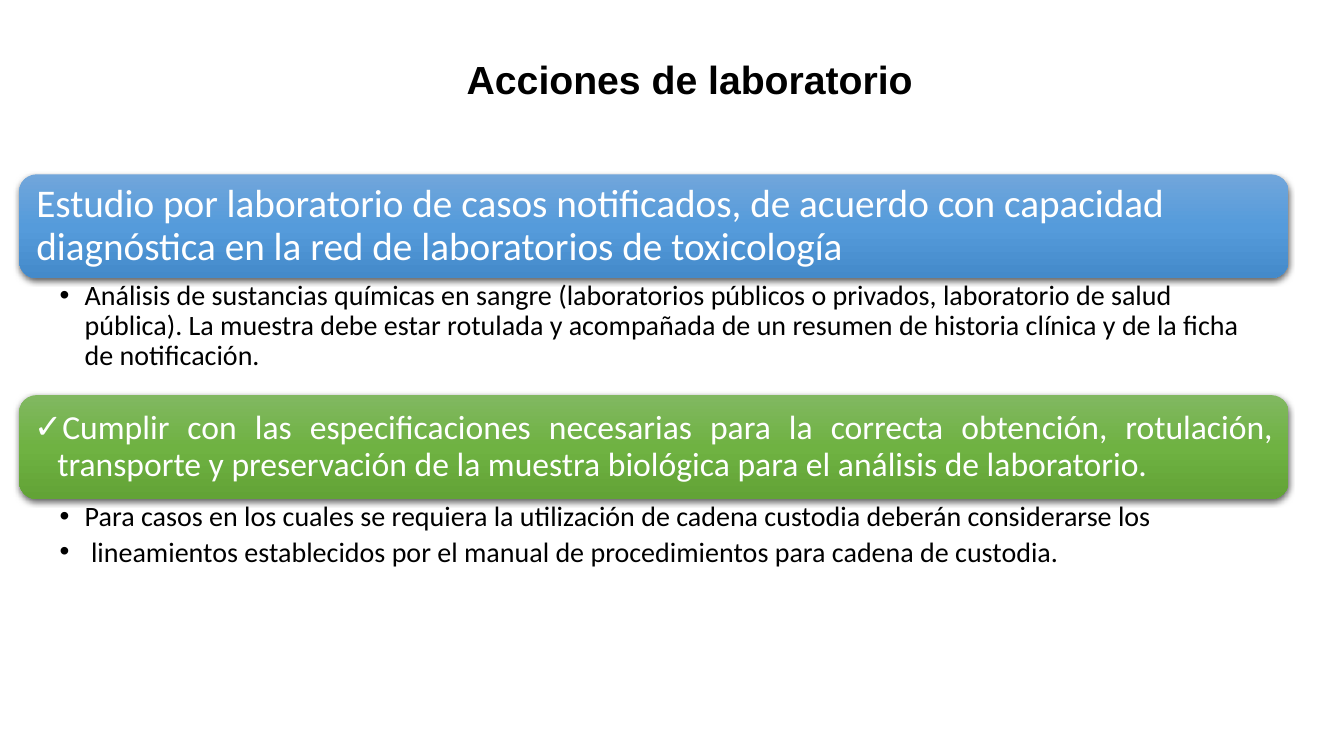
from copy import deepcopy
from lxml.etree import SubElement
from pptx import Presentation
from pptx.dml.color import RGBColor
from pptx.enum.shapes import MSO_SHAPE
from pptx.enum.text import MSO_ANCHOR, MSO_AUTO_SIZE, PP_ALIGN
from pptx.oxml import parse_xml
from pptx.oxml.ns import nsdecls, qn
from pptx.util import Inches, Pt

BLACK = RGBColor(0x00, 0x00, 0x00)
WHITE = RGBColor(0xFF, 0xFF, 0xFF)
BLUES = [RGBColor(0x71, 0xA6, 0xDB), RGBColor(0x55, 0x9B, 0xDB), RGBColor(0x44, 0x8A, 0xCA)]
GREENS = [RGBColor(0x81, 0xB8, 0x61), RGBColor(0x6F, 0xB2, 0x42), RGBColor(0x62, 0xA3, 0x36)]

LEFT, TOP, WIDTH = 0.19, 1.73, 12.59
BAR_HEIGHT, LIST_HEIGHT = 1.03, 1.16

SHADOW = (
    f'<a:outerShdw {nsdecls("a")} blurRad="57150" dist="19050" dir="5400000" algn="ctr" rotWithShape="0">'
    '<a:srgbClr val="000000"><a:alpha val="63000"/></a:srgbClr></a:outerShdw>'
)

SECTIONS = [
    (
        "Estudio por laboratorio de casos notificados, de acuerdo con capacidad "
        "diagnóstica en la red de laboratorios de toxicología",
        28, 0.12, BLUES, PP_ALIGN.LEFT, None,
        ["Análisis de sustancias químicas en sangre (laboratorios públicos o privados, "
         "laboratorio de salud pública). La muestra debe estar rotulada y acompañada de "
         "un resumen de historia clínica y de la ficha de notificación."],
    ),
    (
        "Cumplir con las especificaciones necesarias para la correcta obtención, rotulación, "
        "transporte y preservación de la muestra biológica para el análisis de laboratorio.",
        24, 0.1, GREENS, PP_ALIGN.JUSTIFY, "✓",
        ["Para casos en los cuales se requiera la utilización de cadena custodia deberán considerarse los",
         " lineamientos establecidos por el manual de procedimientos para cadena de custodia."],
    ),
]


def add_bullet(para, character, indent):
    properties = para._p.get_or_add_pPr()
    properties.set("marL", str(Inches(indent)))
    properties.set("indent", str(-Inches(indent)))
    SubElement(properties, qn("a:buFont")).set("typeface", "Arial")
    SubElement(properties, qn("a:buChar")).set("char", character)


def format_text(para, font_name, size, color, space_after=0):
    para.line_spacing = 0.9
    para.space_before = Pt(0)
    para.space_after = Pt(space_after)
    for span in para.runs:
        span.font.name = font_name
        span.font.size = Pt(size)
        span.font.color.rgb = color


deck = Presentation()
deck.slide_width, deck.slide_height = Inches(13.33), Inches(7.5)
page = deck.slides.add_slide(deck.slide_layouts[3])

title = page.shapes.title
title.left, title.top, title.width, title.height = Inches(1.09), Inches(0.42), Inches(11.5), Inches(0.79)
title.text_frame.text = "Acciones de laboratorio"
title.text_frame.vertical_anchor = MSO_ANCHOR.MIDDLE
heading = title.text_frame.paragraphs[0]
heading.alignment = PP_ALIGN.CENTER
format_text(heading, "Arial", 28, BLACK)
heading.runs[0].font.bold = True

for index, (statement, size, inset, colors, alignment, mark, details) in enumerate(SECTIONS):
    top = TOP + index * (BAR_HEIGHT + LIST_HEIGHT)
    bar = page.shapes.add_shape(
        MSO_SHAPE.ROUNDED_RECTANGLE, Inches(LEFT), Inches(top), Inches(WIDTH), Inches(BAR_HEIGHT))
    bar.line.fill.background()
    bar.fill.gradient()
    bar.fill.gradient_angle = 270
    stops = bar._element.spPr.find(qn("a:gradFill")).find(qn("a:gsLst"))
    stops.insert(1, deepcopy(stops[0]))
    for stop, color, position in zip(bar.fill.gradient_stops, colors, (0, 0.5, 1)):
        stop.color.rgb = color
        stop.position = position
    bar.shadow.inherit = False
    bar._element.spPr.find(qn("a:effectLst")).append(parse_xml(SHADOW))

    frame = bar.text_frame
    frame.word_wrap = True
    frame.vertical_anchor = MSO_ANCHOR.MIDDLE
    frame.margin_left = frame.margin_right = frame.margin_top = frame.margin_bottom = Inches(inset)
    frame.text = statement
    para = frame.paragraphs[0]
    para.alignment = alignment
    if mark:
        add_bullet(para, mark, 0.23)
    format_text(para, "Calibri", size, WHITE)

    box = page.placeholders[index + 1]
    box.left, box.top = Inches(LEFT), Inches(top + BAR_HEIGHT)
    box.width, box.height = Inches(WIDTH), Inches(LIST_HEIGHT)
    frame = box.text_frame
    frame.auto_size = MSO_AUTO_SIZE.NONE
    frame.margin_left, frame.margin_right = Inches(0.4), Inches(0.16)
    frame.margin_top = frame.margin_bottom = Inches(0.03)
    frame.text = "\n".join(details)
    for para in frame.paragraphs:
        para.level = 1
        add_bullet(para, "•", 0.25)
        format_text(para, "Calibri", 20, BLACK, 4)

deck.save("out.pptx")
